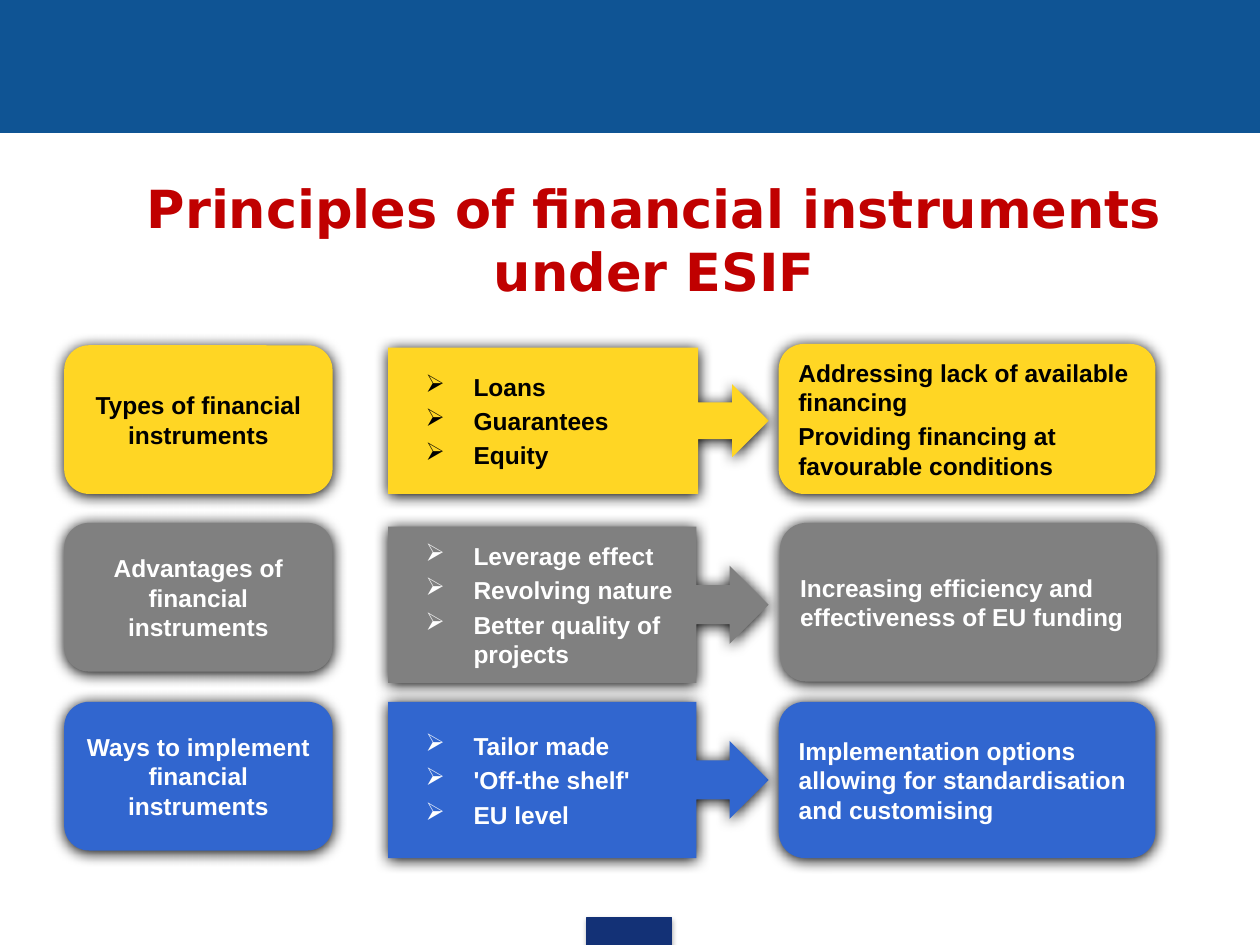
from lxml.etree import SubElement as Sub
from pptx import Presentation
from pptx.dml.color import RGBColor
from pptx.enum.shapes import MSO_SHAPE as Shape
from pptx.enum.text import MSO_ANCHOR as Anchor, PP_ALIGN as Align
from pptx.oxml.ns import qn
from pptx.util import Inches, Pt

BAND = RGBColor(0x0F, 0x54, 0x94)
NAVY = RGBColor(0x13, 0x31, 0x76)
RED = RGBColor(0xC0, 0x00, 0x00)
GOLD = RGBColor(0xFF, 0xD6, 0x24)
GREY = RGBColor(0x80, 0x80, 0x80)
BLUE = RGBColor(0x31, 0x66, 0xCF)
BLACK = RGBColor(0x00, 0x00, 0x00)
WHITE = RGBColor(0xFF, 0xFF, 0xFF)

prs = Presentation()
prs.slide_width, prs.slide_height = Inches(10), Inches(7.5)
slide = prs.slides.add_slide(prs.slide_layouts[6])


def add_box(kind, spot, fill, glow=None):
    """Add a filled shape; glow is shadow opacity %, blur pt, distance pt."""
    box = slide.shapes.add_shape(kind, *[Inches(n) for n in spot])
    box.fill.solid()
    box.fill.fore_color.rgb = fill
    box.line.fill.background()
    box.shadow.inherit = False
    if glow:
        alpha, blur, dist = glow
        effects = box._element.spPr.find(qn("a:effectLst"))
        outer = Sub(effects, qn("a:outerShdw"), blurRad=str(Pt(blur)),
                    dist=str(Pt(dist)), dir="5400000", rotWithShape="0")
        color = Sub(outer, qn("a:srgbClr"), val="000000")
        Sub(color, qn("a:alpha"), val=str(alpha * 1000))
    return box


def add_text(box, lines, ink, align=Align.LEFT, bullet=False):
    """Write bold 14 pt lines, with arrow bullets if asked."""
    frame = box.text_frame
    frame.word_wrap = True
    frame.vertical_anchor = Anchor.MIDDLE
    for i, line in enumerate(lines):
        para = frame.paragraphs[0] if i == 0 else frame.add_paragraph()
        para.text = line
        para.alignment = align
        if i:
            para.space_before = Pt(2.8)
        if bullet:
            props = para._p.get_or_add_pPr()
            props.set("marL", str(Inches(0.58)))
            props.set("indent", str(Inches(-0.38)))
            Sub(props, qn("a:buChar"), char="➢")
        font = para.font
        font.name, font.size, font.bold = "Arial", Pt(14), True
        font.color.rgb = ink


# Top band and footer block
for spot, fill, glow in [((0, 0, 10, 1.05), BAND, None),
                         ((4.66, 7.28, 0.67, 0.22), NAVY, (35, 3.1, 1.8))]:
    bar = add_box(Shape.RECTANGLE, spot, fill, glow)
    bar.line.color.rgb = fill
    bar.line.width = Pt(0.75)

# Title
title = slide.shapes.add_textbox(Inches(0.5), Inches(1.39), Inches(9), Inches(1.02))
frame = title.text_frame
frame.word_wrap = True
frame.vertical_anchor = Anchor.MIDDLE
para = frame.paragraphs[0]
para.text = "Principles of financial instruments under ESIF"
para.alignment = Align.CENTER
para._p.get_or_add_pPr().set("marL", str(Inches(0.39)))
font = para.font
font.name, font.size, font.bold = "DejaVu Sans", Pt(30), True
font.color.rgb = RED

# Rows: fill, ink, topic top, (callout top, height, body share),
# (result left, top, height), then the three texts
rows = [
    (GOLD, BLACK, 2.74, (2.76, 1.16, 0.815), (6.18, 2.73, 1.19),
     "Types of financial instruments",
     ["Loans", "Guarantees", "Equity"],
     ["Addressing lack of available financing",
      "Providing financing at favourable conditions"]),
    (GREY, WHITE, 4.15, (4.18, 1.24, 0.81), (6.19, 4.15, 1.26),
     "Advantages of financial instruments",
     ["Leverage effect", "Revolving nature", "Better quality of projects"],
     ["Increasing efficiency and effectiveness of EU funding"]),
    (BLUE, WHITE, 5.57, (5.57, 1.24, 0.81), (6.18, 5.57, 1.24),
     "Ways to implement financial instruments",
     ["Tailor made", "'Off-the shelf'", "EU level"],
     ["Implementation options allowing for standardisation and customising"]),
]
GLOW = (100, 8.5, 1)
for fill, ink, top, call, end, topic, points, results in rows:
    box = add_box(Shape.ROUNDED_RECTANGLE, (0.51, top, 2.13, 1.18), fill, GLOW)
    add_text(box, [topic], ink, Align.CENTER)

    y, high, share = call
    box = add_box(Shape.RIGHT_ARROW_CALLOUT, (3.08, y, 3.02, high), fill, GLOW)
    box.adjustments[3] = share
    add_text(box, points, ink, bullet=True)

    x, y, high = end
    box = add_box(Shape.ROUNDED_RECTANGLE, (x, y, 2.99, high), fill, GLOW)
    add_text(box, results, ink)

prs.save("out.pptx")
